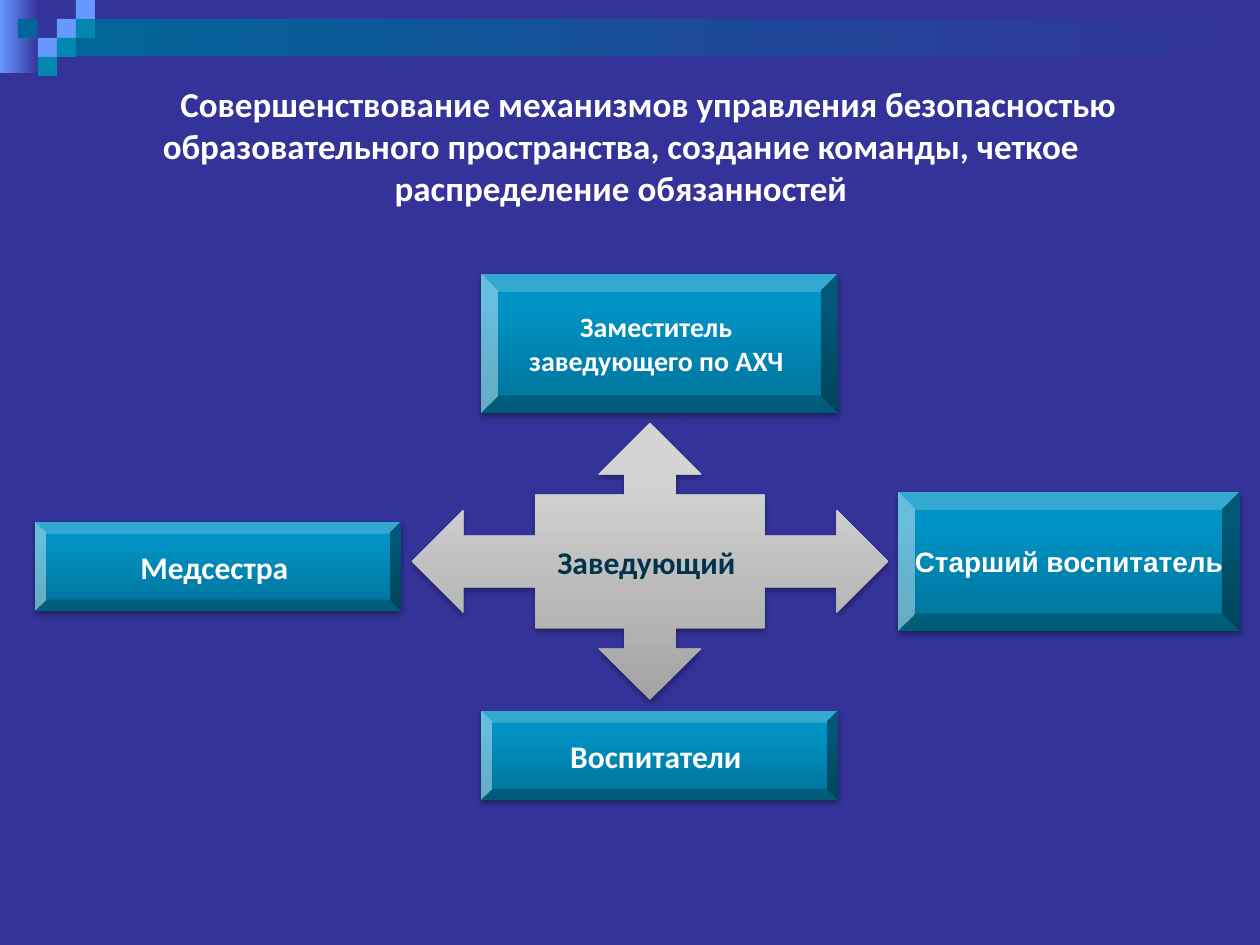
import pptx
import pptx.util
import pptx.dml.color
import pptx.enum.shapes
import pptx.enum.text
import pptx.oxml.ns
import lxml.etree

PX = 914400 // 126
KIND = pptx.enum.shapes.MSO_SHAPE
MID = pptx.enum.text.MSO_ANCHOR.MIDDLE
CENTER = pptx.enum.text.PP_ALIGN.CENTER
qn = pptx.oxml.ns.qn
TEAL = [(0, "007298"), (80, "0094C6"), (100, "0095C7")]
GREY = [(0, "A3A3A3"), (80, "D3D3D3"), (100, "D4D4D4")]


def paint(shape, stops, angle=0):
    shape.shadow.inherit = False
    shape.line.fill.background()
    fill = shape.fill
    if isinstance(stops, str):
        fill.solid()
        fill.fore_color.rgb = pptx.dml.color.RGBColor.from_string(stops)
        return
    fill.gradient()
    fill.gradient_angle = angle
    ramp = shape._element.spPr.find(".//" + qn("a:gsLst"))
    for old in list(ramp):
        ramp.remove(old)
    for pos, hue in stops:
        stop = lxml.etree.SubElement(ramp, qn("a:gs"), pos=str(pos * 1000))
        lxml.etree.SubElement(stop, qn("a:srgbClr"), val=hue)


def write(frame, lines, size, font, hue):
    frame.vertical_anchor = MID
    for i, line in enumerate(lines):
        para = frame.paragraphs[0] if i == 0 else frame.add_paragraph()
        para.alignment = CENTER
        run = para.add_run()
        run.text = line
        run.font.size = pptx.util.Pt(size)
        run.font.name = font
        run.font.bold = True
        run.font.color.rgb = pptx.dml.color.RGBColor.from_string(hue)


deck = pptx.Presentation()
deck.slide_width, deck.slide_height = pptx.util.Inches(10), pptx.util.Inches(7.5)
slide = deck.slides.add_slide(deck.slide_layouts[6])
back = slide.background.fill
back.solid()
back.fore_color.rgb = pptx.dml.color.RGBColor.from_string("333399")

decor = [
    (0, 0, 39, 73, [(0, "6699FF"), (100, "333399")]),
    (57, 19, 1203, 37, [(0, "006699"), (100, "333399")]),
]
cells = [
    (57, 19, "6699FF"), (76, 0, "6699FF"), (76, 19, "0386AF"),
    (38, 38, "6699FF"), (18, 19, "006699"), (57, 38, "0386AF"),
    (38, 57, "0386AF"),
]
decor += [(x, y, 19, 19, hue) for x, y, hue in cells]
for x, y, w, h, stops in decor:
    tile = slide.shapes.add_shape(KIND.RECTANGLE, x * PX, y * PX, w * PX, h * PX)
    paint(tile, stops)

title = slide.shapes.add_textbox(54 * PX, 35 * PX, 1134 * PX, 179 * PX)
frame = title.text_frame
frame.word_wrap = True
frame.margin_top = 48 * PX
write(frame, ["Совершенствование механизмов управления безопасностью "
              "образовательного пространства, создание команды, четкое "
              "распределение обязанностей"], 20, "Calibri", "FFFFFF")
frame.paragraphs[0]._p.get_or_add_pPr().set("indent", str(55 * PX))

roles = [
    (KIND.BEVEL, 481, 274, 357, 139, TEAL,
     ["Заместитель ", "заведующего по АХЧ "], 16, "Calibri", "FFFFFF"),
    (KIND.BEVEL, 481, 711, 357, 89, TEAL,
     ["Воспитатели "], 18, "Calibri", "FFFFFF"),
    (KIND.BEVEL, 898, 492, 342, 139, TEAL,
     ["Старший воспитатель"], 16, "Arial", "FFFFFF"),
    (KIND.BEVEL, 35, 522, 366, 89, TEAL,
     ["Медсестра "], 18, "Calibri", "FFFFFF"),
    (KIND.QUAD_ARROW_CALLOUT, 412, 423, 476, 277, GREY,
     ["Заведующий "], 18, "Calibri", "00334C"),
]
for kind, x, y, w, h, stops, lines, size, font, hue in roles:
    box = slide.shapes.add_shape(kind, x * PX, y * PX, w * PX, h * PX)
    paint(box, stops, 90)
    glow = box._element.spPr.find(qn("a:effectLst"))
    shade = lxml.etree.SubElement(
        glow, qn("a:outerShdw"), blurRad=str(pptx.util.Pt(3.1)),
        dist=str(pptx.util.Pt(1.8)), dir="5400000", rotWithShape="0")
    tint = lxml.etree.SubElement(shade, qn("a:srgbClr"), val="000000")
    lxml.etree.SubElement(tint, qn("a:alpha"), val="35000")
    box.text_frame.word_wrap = False
    write(box.text_frame, lines, size, font, hue)

deck.save("out.pptx")
